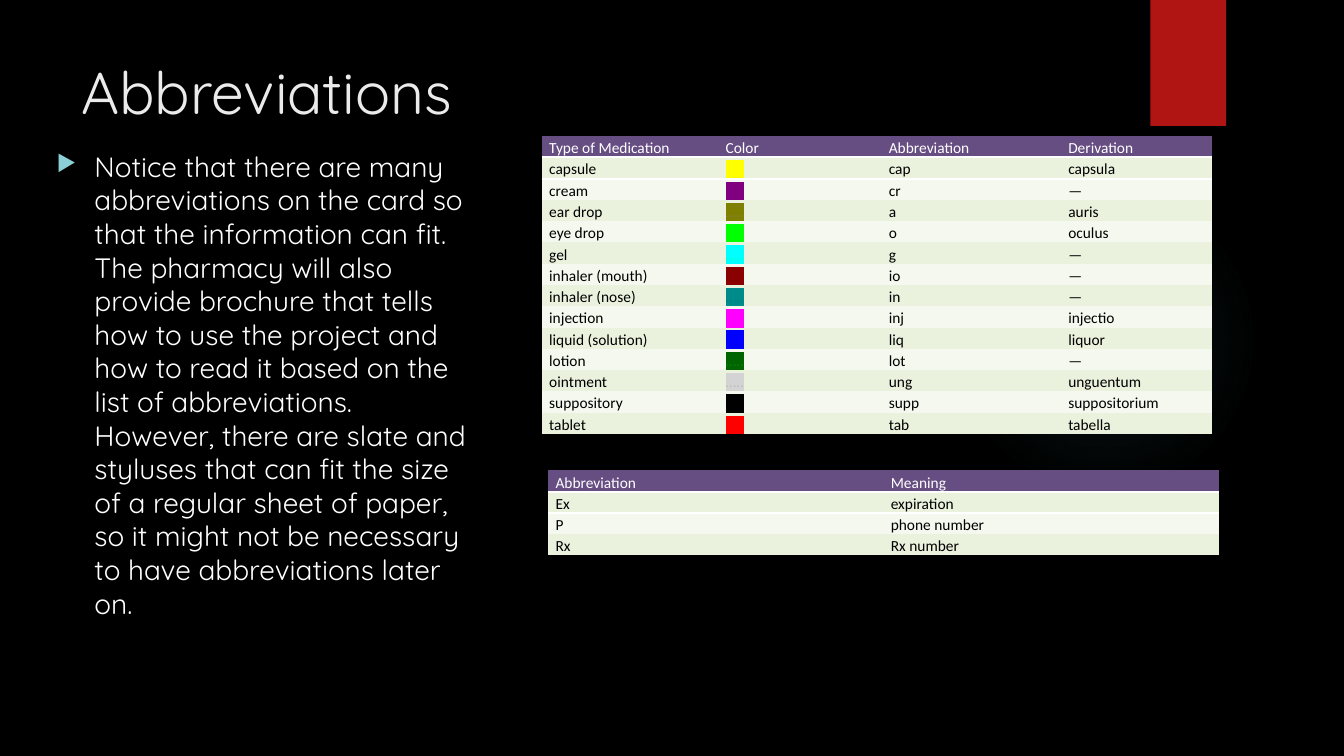
import pptx
import pptx.dml.color
import pptx.enum.shapes
import pptx.enum.text
import pptx.oxml
import pptx.oxml.ns
import pptx.util

Pt = pptx.util.Pt
RGBColor = pptx.dml.color.RGBColor
SHAPES = pptx.enum.shapes.MSO_SHAPE
NAMESPACE = pptx.oxml.ns.nsdecls("a")

BLACK = RGBColor(0x00, 0x00, 0x00)
WHITE = RGBColor(0xFF, 0xFF, 0xFF)
TITLE_GRAY = RGBColor(0xEB, 0xEB, 0xEB)
RED = RGBColor(0xB0, 0x15, 0x13)
TEAL = RGBColor(0x50, 0xB9, 0xC1)
BULLET_TEAL = RGBColor(0x8A, 0xD0, 0xD6)
PURPLE = RGBColor(0x66, 0x4E, 0x82)
BANDS = (RGBColor(0xEA, 0xF1, 0xDD), RGBColor(0xF5, 0xF8, 0xEE))

BODY = (
    "Notice that there are many abbreviations on the card so that the information can fit. "
    "The pharmacy will also provide brochure that tells how to use the project and how to "
    "read it based on the list of abbreviations. However, there are slate and styluses that "
    "can fit the size of a regular sheet of paper, so it might not be necessary to have "
    "abbreviations later on."
)

# A swatch is a pair: text colour, highlight colour
MEDICATIONS = [
    ("Type of Medication", "Color", "Abbreviation", "Derivation"),
    ("capsule", ("FFFF00", "FFFF00"), "cap", "capsula"),
    ("cream", ("800080", "800080"), "cr", "—"),
    ("ear drop", ("838133", "808000"), "a", "auris"),
    ("eye drop", ("00FF00", "00FF00"), "o", "oculus"),
    ("gel", ("00FFCC", "00FFFF"), "g", "—"),
    ("inhaler (mouth)", ("800000", "8B0000"), "io", "—"),
    ("inhaler (nose)", ("008080", "008B8B"), "in", "—"),
    ("injection", ("FF00FF", "FF00FF"), "inj", "injectio"),
    ("liquid (solution)", ("0B00E6", "0000FF"), "liq", "liquor"),
    ("lotion", ("008000", "006400"), "lot", "—"),
    ("ointment", ("BFBFBF", "D3D3D3"), "ung", "unguentum"),
    ("suppository", ("000000", "000000"), "supp", "suppositorium"),
    ("tablet", ("FF0000", "FF0000"), "tab", "tabella"),
]
MEANINGS = [
    ("Abbreviation", "Meaning"),
    ("Ex", "expiration"),
    ("P", "phone number"),
    ("Rx", "Rx number"),
]


def element(xml):
    """Parse one drawing element, adding the namespace to its root tag."""
    tag, rest = xml.split(">", 1)
    if tag.endswith("/"):
        return pptx.oxml.parse_xml(f"{tag[:-1]} {NAMESPACE}/>{rest}")
    return pptx.oxml.parse_xml(f"{tag} {NAMESPACE}>{rest}")


class SlideBuilder:
    text_font = "Quicksand"
    table_font = "Calibri"
    table_size = 11
    row_height = 15.17
    swatch_text = "….."
    plain_table_style = "{2D5ABB26-0587-4C30-8999-92F81FD0307C}"

    def __init__(self, slide):
        self.slide = slide

    def background(self, color):
        fill = self.slide.background.fill
        fill.solid()
        fill.fore_color.rgb = color

    def shape(self, kind, left, top, width, height, color):
        shape = self.slide.shapes.add_shape(kind, Pt(left), Pt(top), Pt(width), Pt(height))
        shape.shadow.inherit = False
        shape.fill.solid()
        shape.fill.fore_color.rgb = color
        shape.line.fill.background()
        return shape

    def glow(self, left, top, size, color):
        shape = self.shape(SHAPES.OVAL, left, top, size, size, color)
        stops = "".join(
            f'<a:gs pos="{position * 1000}"><a:srgbClr val="{color}">'
            f'<a:alpha val="{alpha * 1000}"/></a:srgbClr></a:gs>'
            for position, alpha in ((0, 7), (36, 6), (69, 0))
        )
        gradient = element(
            f'<a:gradFill><a:gsLst>{stops}</a:gsLst><a:path path="circle">'
            '<a:fillToRect l="50000" t="50000" r="50000" b="50000"/></a:path></a:gradFill>'
        )
        properties = shape.element.spPr
        properties.replace(properties.find(pptx.oxml.ns.qn("a:solidFill")), gradient)

    def ribbon(self, left, top, width, height, color):
        shape = self.shape(SHAPES.RECTANGLE, left, top, width, height, color)
        effects = shape.element.spPr.find(pptx.oxml.ns.qn("a:effectLst"))
        effects.append(element(
            f'<a:outerShdw blurRad="{Pt(3)}" dist="{Pt(2)}" dir="5400000" rotWithShape="0">'
            '<a:srgbClr val="000000"><a:alpha val="45000"/></a:srgbClr></a:outerShdw>'
        ))

    def text(self, text, left, top, width, height, size, color, bullet=False):
        box = self.slide.shapes.add_textbox(Pt(left), Pt(top), Pt(width), Pt(height))
        frame = box.text_frame
        frame.word_wrap = True
        frame.text = text
        paragraph = frame.paragraphs[0]
        if bullet:
            properties = paragraph._p.get_or_add_pPr()
            properties.set("marL", str(Pt(27)))
            properties.set("indent", str(-Pt(27)))
            properties.append(element(
                f'<a:buClr><a:srgbClr val="{BULLET_TEAL}"/></a:buClr>'))
            properties.append(element('<a:buSzPct val="80000"/>'))
            properties.append(element('<a:buChar char="▶"/>'))
        self.format_run(paragraph.runs[0], self.text_font, size, color)

    def format_run(self, run, font, size, color):
        run.font.name = font
        run.font.size = Pt(size)
        run.font.color.rgb = color

    def table(self, rows, left, top, widths):
        frame = self.slide.shapes.add_table(
            len(rows), len(widths), Pt(left), Pt(top),
            Pt(sum(widths)), Pt(self.row_height * len(rows)))
        table = frame.table
        table._tbl.tblPr.find(pptx.oxml.ns.qn("a:tableStyleId")).text = self.plain_table_style
        for column, width in zip(table.columns, widths):
            column.width = Pt(width)
        for row_index, values in enumerate(rows):
            table.rows[row_index].height = Pt(self.row_height)
            for column_index, value in enumerate(values):
                self.cell(table.cell(row_index, column_index), value, row_index)

    def cell(self, cell, value, row_index):
        is_header = row_index == 0
        is_swatch = isinstance(value, tuple)
        cell.margin_left = cell.margin_right = Pt(5.4)
        cell.margin_top = cell.margin_bottom = Pt(0)
        cell.fill.solid()
        cell.fill.fore_color.rgb = PURPLE if is_header else BANDS[(row_index - 1) % 2]
        cell.text_frame.text = self.swatch_text if is_swatch else value
        paragraph = cell.text_frame.paragraphs[0]
        paragraph.line_spacing = 1.15
        run = paragraph.runs[0]
        color = WHITE if is_header else BLACK
        if is_swatch:
            color = RGBColor.from_string(value[0])
        self.format_run(run, self.table_font, self.table_size, color)
        if is_swatch:
            run.font._element.find(pptx.oxml.ns.qn("a:solidFill")).addnext(element(
                f'<a:highlight><a:srgbClr val="{value[1]}"/></a:highlight>'))
        # White rule between the header and the first row
        if row_index < 2:
            side = "lnB" if is_header else "lnT"
            cell._tc.tcPr.insert(0, element(
                f'<a:{side} w="{Pt(1.5)}"><a:solidFill><a:srgbClr val="{WHITE}"/>'
                f'</a:solidFill></a:{side}>'))


def main():
    presentation = pptx.Presentation()
    presentation.slide_width = Pt(960)
    presentation.slide_height = Pt(540)
    builder = SlideBuilder(presentation.slides.add_slide(presentation.slide_layouts[6]))

    # Backdrop
    builder.background(BLACK)
    builder.glow(677.5, 131.8, 221.8, TEAL)
    builder.ribbon(821.8, 0, 54, 90, RED)

    # Title and body
    builder.text("Abbreviations", 51, 36, 792, 110, 42, TITLE_GRAY)
    builder.text(BODY, 33.4, 103, 311.8, 403, 20, WHITE, bullet=True)

    # Tables
    builder.table(MEDICATIONS, 386.9, 97.2, (126, 116.6, 128.2, 108))
    builder.table(MEANINGS, 391.4, 336, (239.5, 239.5))

    presentation.save("out.pptx")


if __name__ == "__main__":
    main()
